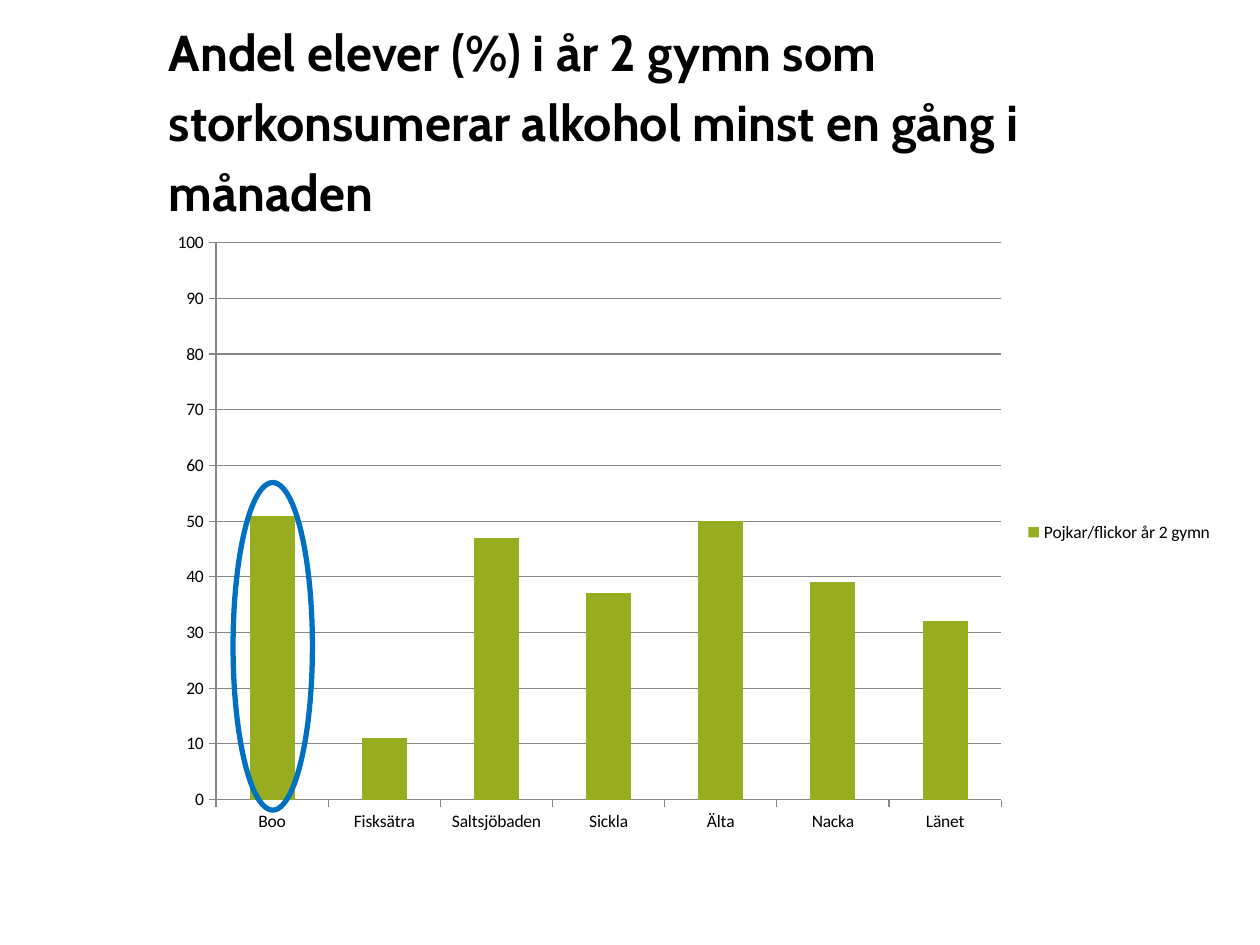
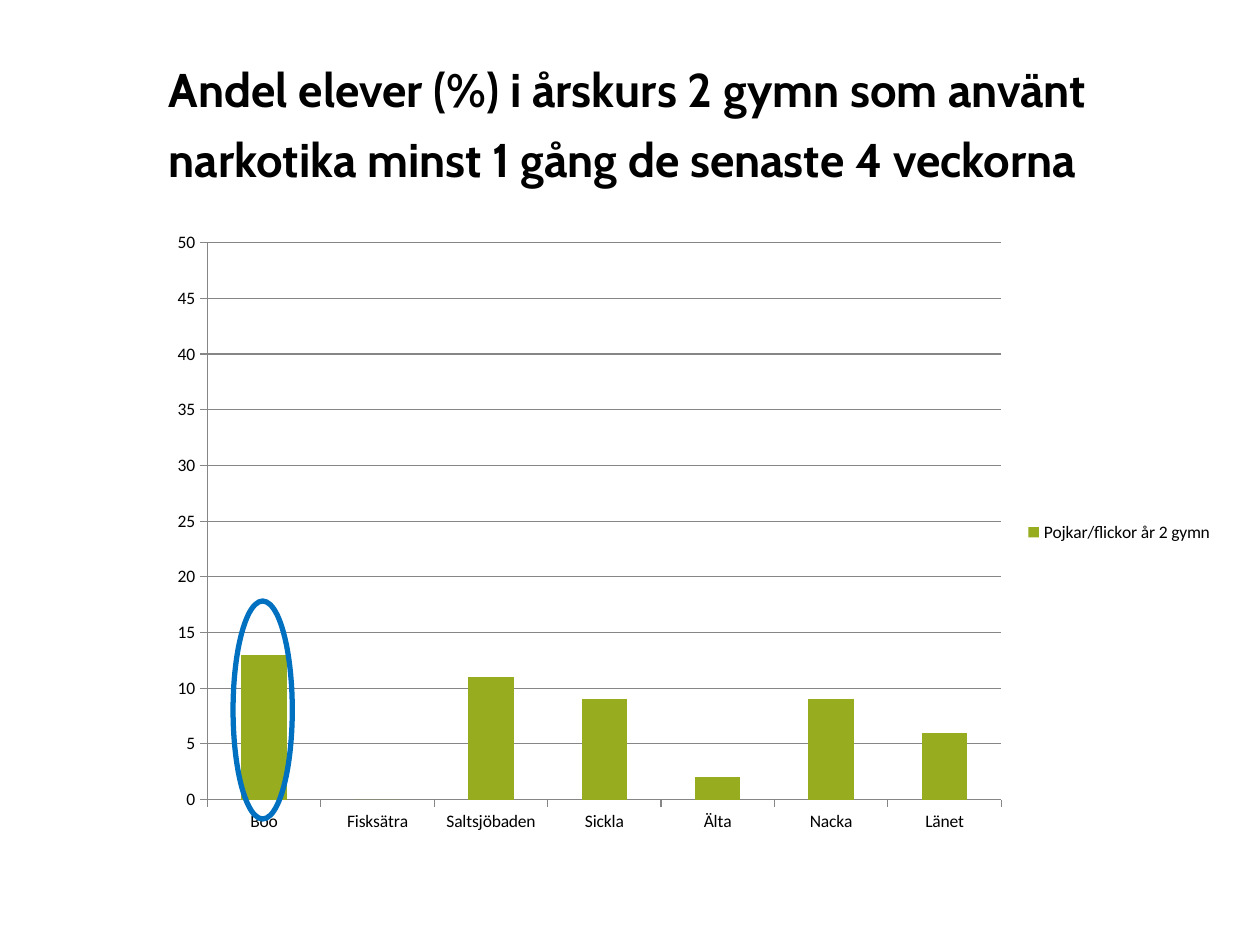
from dataclasses import dataclass

from pptx import Presentation
from pptx.chart.data import CategoryChartData
from pptx.dml.color import RGBColor
from pptx.enum.chart import XL_CHART_TYPE, XL_LEGEND_POSITION, XL_TICK_MARK
from pptx.enum.shapes import MSO_SHAPE
from pptx.enum.text import MSO_ANCHOR, MSO_AUTO_SIZE, PP_ALIGN
from pptx.util import Inches, Pt


@dataclass(frozen=True)
class Theme:
    text: RGBColor = RGBColor(0x00, 0x00, 0x00)
    bar: RGBColor = RGBColor(0x97, 0xAC, 0x1E)
    ring: RGBColor = RGBColor(0x00, 0x70, 0xC0)
    grid: RGBColor = RGBColor(0x86, 0x86, 0x86)
    title_font: str = "Cabin"
    chart_font: str = "Calibri"
    chart_size: float = 10
    title_leading: float = 40
    ring_width: float = 3


THEME = Theme()
TITLE_BOX = (1.24, 0.3, 8.49, 1.25)
CHART_BOX = (1.24, 1.75, 8.49, 4.95)
AREAS = ["Boo", "Fisksätra", "Saltsjöbaden", "Sickla", "Älta", "Nacka", "Länet"]
SERIES = "Pojkar/flickor år 2 gymn"

SLIDES = [
    dict(
        title="Andel elever (%) i år 2 gymn som storkonsumerar alkohol "
              "minst en gång i månaden",
        title_size=28.8,
        values=[51, 11, 47, 37, 50, 39, 32],
        top_value=100,
        step=10,
        ring_box=(1.85, 3.83, 0.63, 2.6),
    ),
    dict(
        title="Andel elever (%) i årskurs 2 gymn som använt narkotika "
              "minst 1 gång de senaste 4 veckorna",
        title_size=27,
        values=[13, 0, 11, 9, 2, 9, 6],
        top_value=50,
        step=5,
        ring_box=(1.85, 4.77, 0.47, 1.73),
    ),
]


def inches(box):
    return [Inches(v) for v in box]


def style_font(font, name, size, color=THEME.text, bold=False):
    font.name, font.size, font.bold = name, Pt(size), bold
    font.color.rgb = color


def write(tf, text, leading, align=PP_ALIGN.LEFT, **font_format):
    p = tf.paragraphs[0]
    p.alignment, p.line_spacing = align, Pt(leading)
    p.space_before = Pt(0)
    r = p.add_run()
    r.text = text
    style_font(r.font, **font_format)


def set_title(s, text, size, box):
    sp = s.shapes.title
    sp.left, sp.top, sp.width, sp.height = inches(box)
    tf = sp.text_frame
    tf.word_wrap, tf.auto_size = True, MSO_AUTO_SIZE.NONE
    tf.vertical_anchor = MSO_ANCHOR.MIDDLE
    write(tf, text, THEME.title_leading, name=THEME.title_font, size=size, bold=True)


def add_share_chart(s, values, top_value, step, box):
    data = CategoryChartData()
    data.categories = AREAS
    data.add_series(SERIES, values)
    chart = s.shapes.add_chart(
        XL_CHART_TYPE.COLUMN_CLUSTERED, *inches(box), data).chart
    style_font(chart.font, THEME.chart_font, THEME.chart_size)
    chart.has_title = False
    chart.has_legend = True
    chart.legend.position = XL_LEGEND_POSITION.RIGHT
    chart.legend.include_in_layout = False

    plot = chart.plots[0]
    plot.gap_width, plot.vary_by_categories = 150, False
    fill = plot.series[0].format.fill
    fill.solid()
    fill.fore_color.rgb = THEME.bar

    value_axis = chart.value_axis
    value_axis.minimum_scale, value_axis.maximum_scale = 0, top_value
    value_axis.major_unit = step
    value_axis.has_major_gridlines = True
    for axis in (chart.category_axis, value_axis):
        axis.major_tick_mark = XL_TICK_MARK.OUTSIDE
    for part in (chart.category_axis, value_axis, value_axis.major_gridlines):
        part.format.line.color.rgb = THEME.grid
        part.format.line.width = Pt(0.75)


def add_ring(s, box):
    ring = s.shapes.add_shape(MSO_SHAPE.OVAL, *inches(box))
    ring.shadow.inherit = False
    ring.fill.background()
    ring.line.color.rgb = THEME.ring
    ring.line.width = Pt(THEME.ring_width)


def add_share_slide(prs, title, title_size, values, top_value, step, ring_box):
    s = prs.slides.add_slide(prs.slide_layouts.get_by_name("Title Only"))
    set_title(s, title, title_size, TITLE_BOX)
    add_share_chart(s, values, top_value, step, CHART_BOX)
    add_ring(s, ring_box)


def main():
    prs = Presentation()
    prs.slide_width, prs.slide_height = Inches(10), Inches(7.5)
    for content in SLIDES:
        add_share_slide(prs, **content)
    prs.save("out.pptx")


if __name__ == "__main__":
    main()
